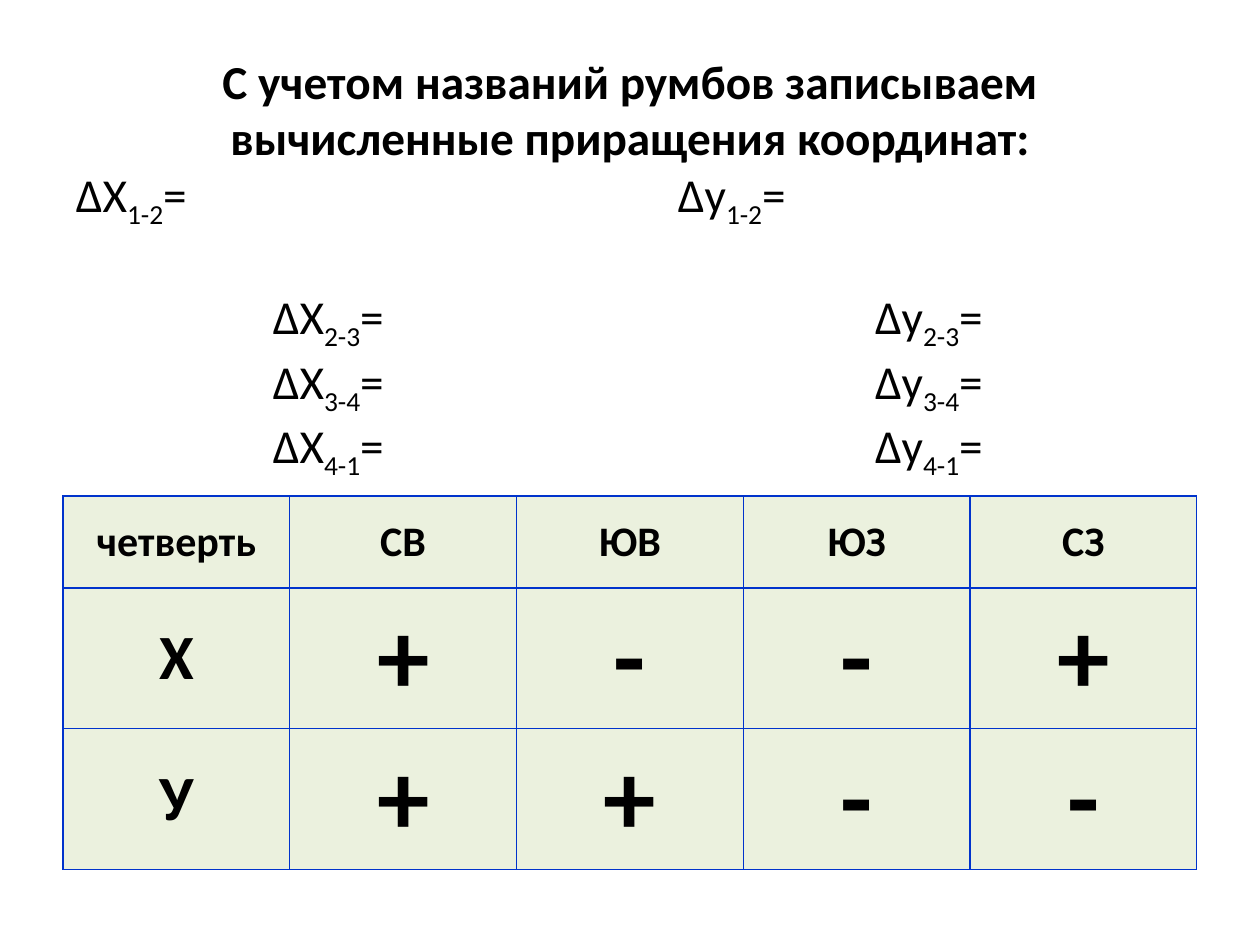
from dataclasses import dataclass

from lxml.etree import SubElement
from pptx import Presentation
from pptx.dml.color import RGBColor as RGB
from pptx.enum.text import MSO_ANCHOR as ANCHOR, MSO_AUTO_SIZE as FIT, PP_ALIGN as ALIGN
from pptx.oxml.ns import qn
from pptx.util import Emu, Pt

EMU_PER_PX = 914400 // 126


@dataclass(frozen=True)
class Theme:
    font: str = "Calibri"
    ink: str = "000000"
    cell: str = "EBF1DE"
    border: str = "0033CC"
    title: int = 27
    head: int = 24
    axis: int = 36
    sign: int = 60


THEME = Theme()
HEADING = "С учетом названий румбов записываем вычисленные приращения координат:"
SIDES = ("1-2", "2-3", "3-4", "4-1")
QUARTERS = (
    ("четверть", "СВ", "ЮВ", "ЮЗ", "СЗ"),
    ("Х", "+", "-", "-", "+"),
    ("У", "+", "+", "-", "-"),
)


def px(n):
    """Turn whole pixels into EMU."""
    return Emu(n * EMU_PER_PX)


def add_text(p, text, size=THEME.title, bold=False, sub=False):
    """Add one formatted run to a paragraph."""
    r = p.add_run()
    r.text = text
    r.font.name, r.font.size, r.font.bold = THEME.font, Pt(size), bold
    r.font.color.rgb = RGB.from_string(THEME.ink)
    if sub:
        r.font._element.set("baseline", "-25000")


def set_tabs(p, stops):
    """Give a paragraph left tab stops at the given pixels."""
    tabs = SubElement(p._p.get_or_add_pPr(), qn("a:tabLst"))
    for stop in stops:
        SubElement(tabs, qn("a:tab"), pos=str(px(stop)), algn="l")


def add_increments(tf, side, indent, gap):
    """Add a line with the two coordinate increments of one side."""
    p = tf.add_paragraph()
    p.alignment = ALIGN.LEFT
    p.space_before = Pt(gap)
    column = 602
    set_tabs(p, [indent, indent + column] if indent else [column])
    for lead, name in (("\t" if indent else "", "∆Х"), ("\t", "∆у")):
        add_text(p, lead + name)
        add_text(p, side, sub=True)
        add_text(p, "=")


def fill_title(sp, x, y, w, h):
    """Place the title and write the heading and the increments."""
    sp.left, sp.top, sp.width, sp.height = map(px, (x, y, w, h))
    tf = sp.text_frame
    tf.word_wrap, tf.auto_size = True, FIT.NONE
    tf.vertical_anchor = ANCHOR.MIDDLE
    tf.margin_left = tf.margin_right = px(13)
    tf.margin_top, tf.margin_bottom = 0, px(54)
    p = tf.paragraphs[0]
    p.alignment = ALIGN.CENTER
    add_text(p, HEADING, bold=True)
    for i, side in enumerate(SIDES):
        add_increments(tf, side, indent=197 if i else 0, gap=33 if i == 1 else 0)


def add_borders(cell):
    """Draw a thin line on every side of a cell."""
    tcPr = cell._tc.get_or_add_tcPr()
    for i, edge in enumerate("LRTB"):
        ln = tcPr.makeelement(qn(f"a:ln{edge}"), {"w": str(Pt(1))})
        fill = SubElement(ln, qn("a:solidFill"))
        SubElement(fill, qn("a:srgbClr"), val=THEME.border)
        tcPr.insert(i, ln)


def add_quarters(s, x, y, w, h):
    """Add the table of signs by quarter."""
    frame = s.shapes.add_table(len(QUARTERS), len(QUARTERS[0]), *map(px, (x, y, w, h)))
    table = frame.table
    for row, height in zip(table.rows, (92, 126, 126)):
        row.height = px(height)
    frame.height = px(h)
    for i, texts in enumerate(QUARTERS):
        for j, text in enumerate(texts):
            cell = table.cell(i, j)
            cell.fill.solid()
            cell.fill.fore_color.rgb = RGB.from_string(THEME.cell)
            cell.vertical_anchor = ANCHOR.MIDDLE
            add_borders(cell)
            p = cell.text_frame.paragraphs[0]
            p.alignment = ALIGN.CENTER
            size = THEME.head if i == 0 else THEME.axis if j == 0 else THEME.sign
            add_text(p, text, size=size, bold=True)


def main():
    """Build the slide and save it."""
    prs = Presentation()
    prs.slide_width, prs.slide_height = px(1260), px(945)
    s = prs.slides.add_slide(prs.slide_layouts[5])
    fill_title(s.shapes.title, 63, 73, 1134, 441)
    add_quarters(s, 63, 496, 1134, 369)
    prs.save("out.pptx")


if __name__ == "__main__":
    main()
